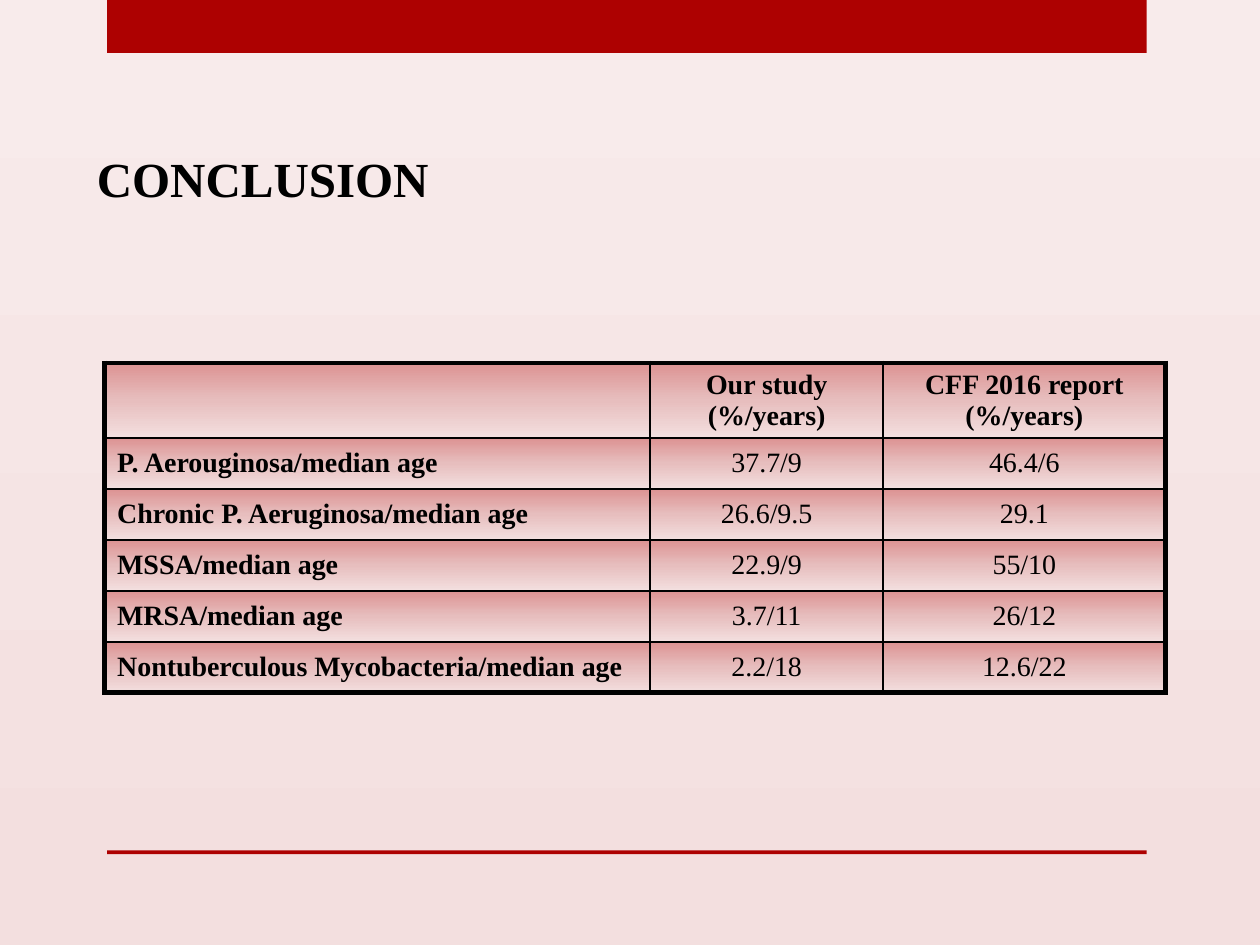
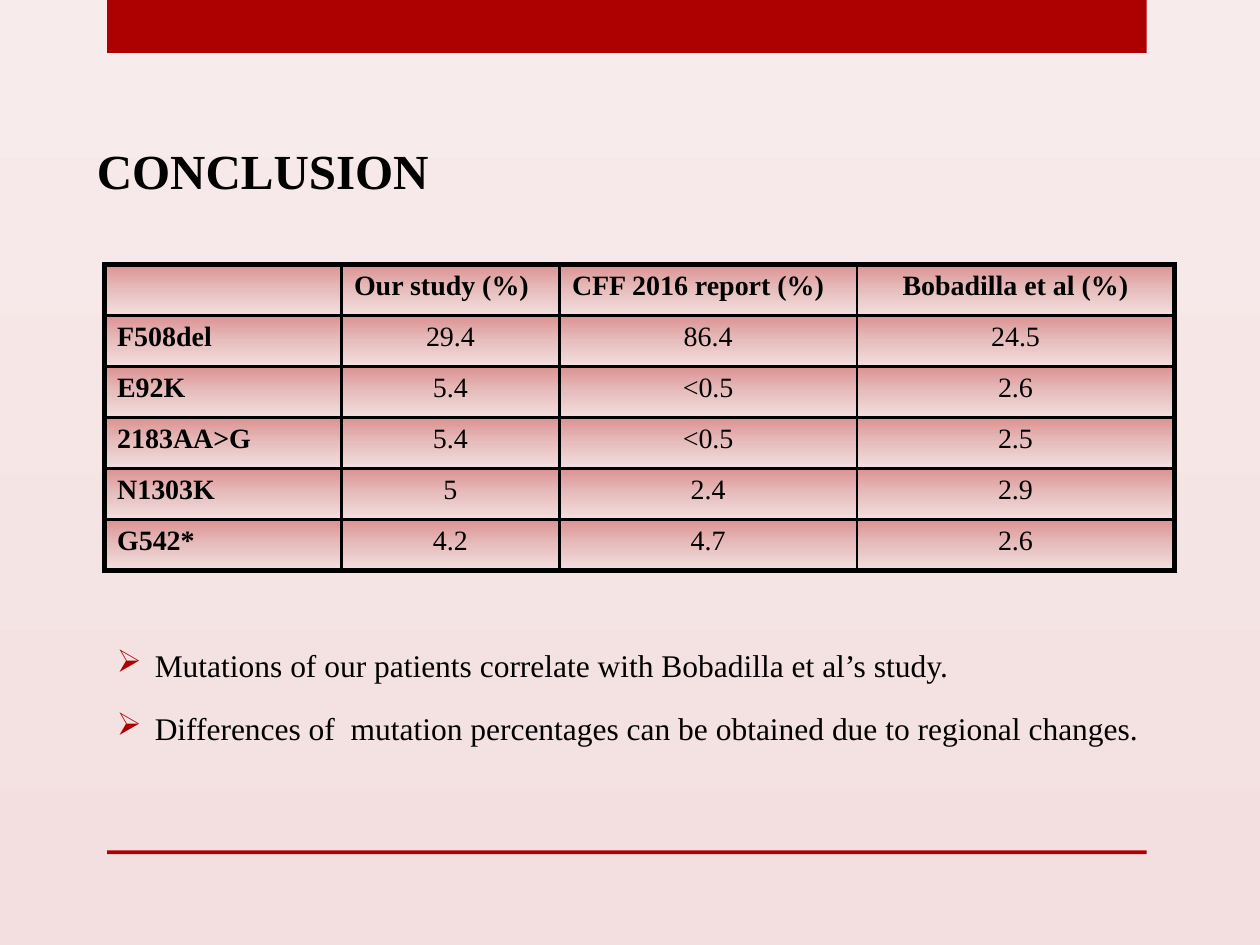
from lxml import etree
from pptx import Presentation
from pptx.dml.color import RGBColor
from pptx.enum.shapes import MSO_SHAPE as Shape
from pptx.enum.text import MSO_ANCHOR as Anchor, PP_ALIGN as Align
from pptx.oxml.ns import qn
from pptx.util import Inches, Pt

FONT, INK, RED = "Times New Roman", "000000", "AD0101"
BACK = [(0, "F8EBEB"), (100, "F3DFDF")]
SHADE = [(0, "DC9292"), (50, "E7BEBE"), (100, "F3DFDF")]
BANDS = [(0, 0.42), (6.75, 0.03)]
ROW = 2.43 / 6
THICK, THIN = 3, 1.5
L, C = Align.LEFT, Align.CENTER

SLIDES = [
    dict(
        title=(1.13, 6.69), top=2.88, cols=[4.33, 1.85, 2.24],
        anchor=Anchor.MIDDLE, heads=[L, C, C],
        rows=[
            ("", "Our study (%/years)", "CFF 2016 report (%/years)"),
            ("P. Aerouginosa/median age", "37.7/9", "46.4/6"),
            ("Chronic P. Aeruginosa/median age", "26.6/9.5", "29.1"),
            ("MSSA/median age", "22.9/9", "55/10"),
            ("MRSA/median age", "3.7/11", "26/12"),
            ("Nontuberculous Mycobacteria/median age", "2.2/18", "12.6/22"),
        ],
        points=[],
    ),
    dict(
        title=(1.07, 5.51), top=2.1, cols=[1.88, 1.73, 2.36, 2.52],
        anchor=Anchor.TOP, heads=[L, L, L, C],
        rows=[
            ("", "Our study (%)", "CFF 2016 report (%)", "Bobadilla et al (%)"),
            ("F508del", "29.4", "86.4", "24.5"),
            ("E92K", "5.4", "<0.5", "2.6"),
            ("2183AA>G", "5.4", "<0.5", "2.5"),
            ("N1303K", "5", "2.4", "2.9"),
            ("G542*", "4.2", "4.7", "2.6"),
        ],
        points=[
            "Mutations of our patients correlate with Bobadilla et al’s study.",
            "Differences of  mutation percentages can be obtained due to regional changes.",
        ],
    ),
]


def node(parent, tag, **attrs):
    return etree.SubElement(parent, qn(tag), {k: str(v) for k, v in attrs.items()})


def grade(parent, stops):
    """Add a gradient fill that runs from top to bottom."""
    grad = node(parent, "a:gradFill", rotWithShape=1)
    group = node(grad, "a:gsLst")
    for pos, color in stops:
        stop = node(group, "a:gs", pos=pos * 1000)
        node(stop, "a:srgbClr", val=color)
    node(grad, "a:lin", ang=90 * 60000, scaled=0)
    return grad


def style(para, size, bold=False, align=L):
    para.alignment = align
    font = para.font
    for run in para.runs:
        font = run.font
    font.name, font.size, font.bold = FONT, Pt(size), bold
    font.color.rgb = RGBColor.from_string(INK)


def add_base(slide):
    """Paint the background and the two red bands."""
    fill = slide.background.fill
    fill.solid()
    old = slide.element.find(".//" + qn("p:bgPr")).find(qn("a:solidFill"))
    new = grade(old.getparent(), BACK)
    old.getparent().replace(old, new)
    for top, high in BANDS:
        band = slide.shapes.add_shape(
            Shape.RECTANGLE, Inches(0.85), Inches(top), Inches(8.25), Inches(high))
        band.shadow.inherit = False
        band.fill.solid()
        band.fill.fore_color.rgb = RGBColor.from_string(RED)
        band.line.fill.background()


def add_text(slide, left, top, wide, high, lines):
    box = slide.shapes.add_textbox(*map(Inches, (left, top, wide, high)))
    frame = box.text_frame
    frame.word_wrap = True
    frame.text = "\n".join(lines)
    return frame.paragraphs


def add_grid(slide, top, cols, rows, heads, anchor):
    last_r, last_c = len(rows) - 1, len(cols) - 1
    grid = slide.shapes.add_table(
        len(rows), len(cols), Inches(0.83), Inches(top),
        Inches(sum(cols)), Inches(ROW * len(rows))).table
    grid.first_row = grid.horz_banding = False
    for col, wide in zip(grid.columns, cols):
        col.width = Inches(wide)
    for r, row in enumerate(rows):
        grid.rows[r].height = Inches(ROW)
        for c, text in enumerate(row):
            cell = grid.cell(r, c)
            cell.text_frame.text = text
            cell.vertical_anchor = anchor
            align = heads[c] if r == 0 else C if c else L
            style(cell.text_frame.paragraphs[0], 16, r == 0 or c == 0, align)
            props = cell._tc.get_or_add_tcPr()
            outer = dict(L=c == 0, R=c == last_c, T=r == 0, B=r == last_r)
            for side, edge in outer.items():
                line = node(props, "a:ln" + side, w=Pt(THICK if edge else THIN))
                node(node(line, "a:solidFill"), "a:srgbClr", val=INK)
            grade(props, SHADE)


def add_points(slide, points):
    for para in add_text(slide, 0.83, 4.93, 8.35, 1.07, points):
        style(para, 18, align=Align.JUSTIFY)
        para.line_spacing = 1.5
        para.space_before = Pt(3.6)
        props = para._p.get_or_add_pPr()
        props.set("marL", str(Inches(0.3)))
        props.set("indent", str(-Inches(0.3)))
        node(node(props, "a:buClr"), "a:srgbClr", val=RED)
        node(props, "a:buFont", typeface="Wingdings")
        props.remove(props[-1])
        node(props, "a:buChar", char="➢")


def main():
    deck = Presentation()
    deck.slide_width, deck.slide_height = Inches(10), Inches(7.5)
    for data in SLIDES:
        slide = deck.slides.add_slide(deck.slide_layouts[6])
        add_base(slide)
        add_grid(slide, data["top"], data["cols"], data["rows"],
                 data["heads"], data["anchor"])
        top, wide = data["title"]
        style(add_text(slide, 0.67, top, wide, 0.57, ["CONCLUSION"])[0], 28, True)
        if data["points"]:
            add_points(slide, data["points"])
    deck.save("out.pptx")


if __name__ == "__main__":
    main()
